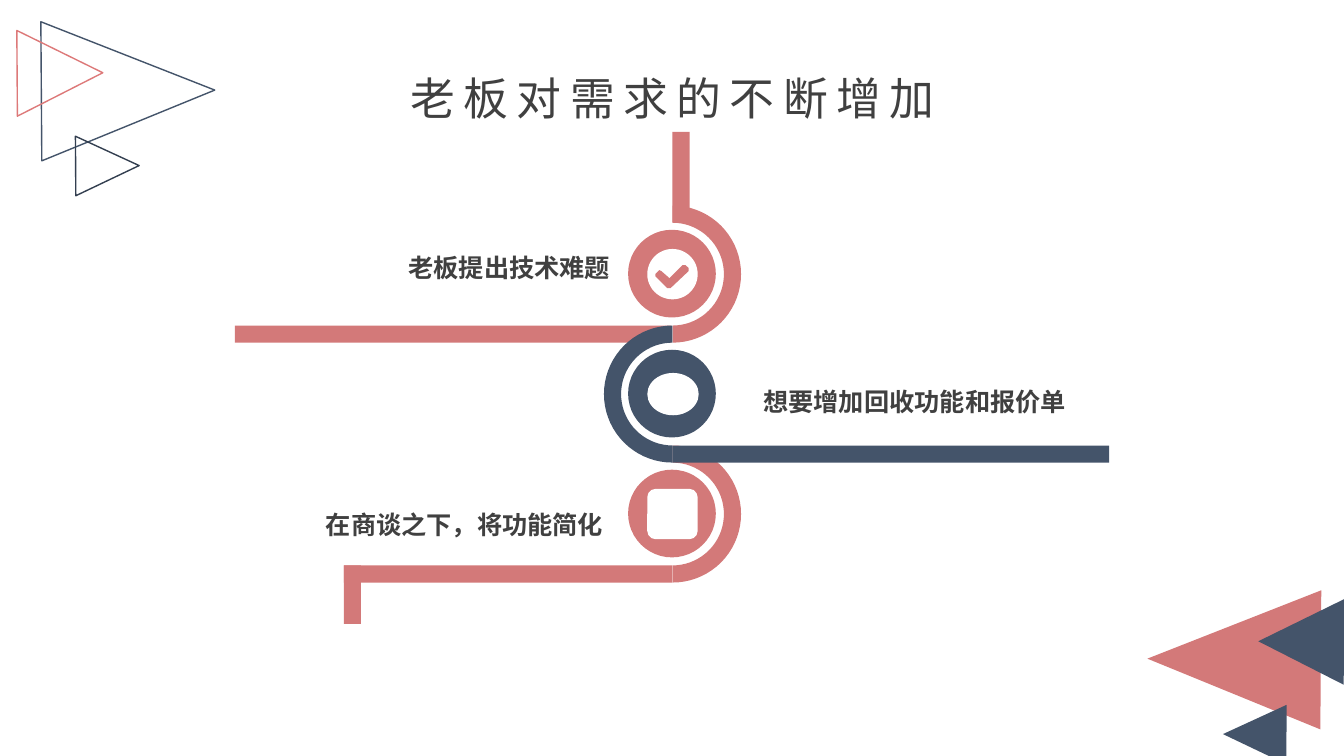
from math import cos, radians, sin

from lxml.etree import SubElement
from pptx import Presentation
from pptx.dml.color import RGBColor
from pptx.enum.shapes import MSO_SHAPE
from pptx.enum.text import MSO_ANCHOR, MSO_AUTO_SIZE, PP_ALIGN
from pptx.oxml.ns import qn
from pptx.util import Pt

PX = 9144  # 100 px to the inch
FONT = "Noto Sans CJK SC"
ROSE = RGBColor(0xD3, 0x79, 0x79)
LIGHT_ROSE = RGBColor(0xDD, 0x79, 0x79)
NAVY = RGBColor(0x44, 0x54, 0x6A)
DARK_NAVY = RGBColor(0x33, 0x3F, 0x50)
WHITE = RGBColor(0xFF, 0xFF, 0xFF)
TEXT = RGBColor(0x40, 0x40, 0x40)

# The winding road: centre line, spacing of its bends, and ring sizes
CENTRE_X, FIRST_Y, STEP = 667, 272, 119
OUTER, INNER, BAND = 68, 51, 17
DISK = 87


class RoadSlide:
    def __init__(self, presentation):
        self.slide = presentation.slides.add_slide(presentation.slide_layouts[5])
        self.shapes = self.slide.shapes

    def paint(self, shape, fill=None, line=None):
        shape.shadow.inherit = False
        if fill is None:
            shape.fill.background()
        else:
            shape.fill.solid()
            shape.fill.fore_color.rgb = fill
        if line is None:
            shape.line.fill.background()
        else:
            shape.line.color.rgb = line
            shape.line.width = Pt(1)

    def preset(self, kind, box, fill=None, line=None, rotation=0):
        shape = self.shapes.add_shape(kind, *(value * PX for value in box))
        shape.rotation = rotation
        self.paint(shape, fill, line)

    def outline(self, points, fill):
        corners = [(round(x * PX), round(y * PX)) for x, y in points]
        builder = self.shapes.build_freeform(*corners[0])
        builder.add_line_segments(corners[1:], close=True)
        self.paint(builder.convert_to_shape(), fill)

    def bend(self, centre_y, side, fill):
        """Half ring open towards the centre line; side is 1 (right) or -1 (left)."""
        angles = [radians(degree) for degree in range(-90, 91, 5)]
        points = [(CENTRE_X + side * radius * cos(angle), centre_y + radius * sin(angle))
                  for radius, sweep in ((OUTER, angles), (INNER, angles[::-1]))
                  for angle in sweep]
        self.outline(points, fill)

    def station(self, index, side, fill, icon, icon_size):
        centre_y = FIRST_Y + index * STEP
        width, height = icon_size
        self.bend(centre_y, side, fill)
        self.preset(MSO_SHAPE.OVAL,
                    (CENTRE_X - DISK // 2 - 1, centre_y - DISK // 2 - 1, DISK, DISK), fill)
        self.preset(icon, (CENTRE_X - width // 2, centre_y - height // 2, width, height), WHITE)

    def add_text(self, frame, text, size, align, bold=False, spacing=0):
        paragraph = frame.paragraphs[0]
        paragraph.alignment = align
        run = paragraph.add_run()
        run.text = text
        run.font.size = Pt(size)
        run.font.bold = bold
        run.font.name = FONT
        run.font.color.rgb = TEXT
        properties = run._r.get_or_add_rPr()
        SubElement(properties, qn("a:ea")).set("typeface", FONT)
        if spacing:
            properties.set("spc", str(spacing * 100))

    def title(self, box, text):
        title = self.shapes.title
        title.left, title.top, title.width, title.height = (value * PX for value in box)
        frame = title.text_frame
        frame.margin_left = frame.margin_right = frame.margin_top = frame.margin_bottom = 0
        frame.vertical_anchor = MSO_ANCHOR.MIDDLE
        frame.auto_size = MSO_AUTO_SIZE.SHAPE_TO_FIT_TEXT
        self.add_text(frame, text, 32, PP_ALIGN.CENTER, spacing=6)

    def label(self, box, text):
        frame = self.shapes.add_textbox(*(value * PX for value in box)).text_frame
        frame.word_wrap = False
        frame.auto_size = MSO_AUTO_SIZE.SHAPE_TO_FIT_TEXT
        self.add_text(frame, text, 18, PP_ALIGN.RIGHT, bold=True)


def main():
    presentation = Presentation()
    presentation.slide_width = 1333 * PX
    presentation.slide_height = 750 * PX
    road = RoadSlide(presentation)

    # Corner triangles
    for box, fill in (((1155, 568, 138, 172), ROSE),
                      ((1215, 697, 59, 63), NAVY),
                      ((1248, 594, 85, 85), NAVY)):
        road.preset(MSO_SHAPE.ISOSCELES_TRIANGLE, box, fill, rotation=270.4)
    for box, line in (((58, 4, 138, 172), NAVY),
                      ((77, 133, 59, 63), DARK_NAVY),
                      ((17, 30, 85, 85), LIGHT_ROSE)):
        road.preset(MSO_SHAPE.ISOSCELES_TRIANGLE, box, line=line, rotation=89.6)

    # First bend with its check mark
    for box in ((233, 323, 433, BAND), (667, 131, BAND, 90)):
        road.preset(MSO_SHAPE.RECTANGLE, box, ROSE)
    road.station(0, 1, ROSE, MSO_SHAPE.OVAL, (50, 50))
    road.outline([(650, 272), (654, 268), (656, 269), (664, 276), (677, 263), (680, 263),
                  (683, 266), (683, 269), (665, 286), (662, 286), (650, 274)], ROSE)

    # Last bend
    for box in ((341, 561, 326, BAND), (341, 561, BAND, 58)):
        road.preset(MSO_SHAPE.RECTANGLE, box, ROSE)
    road.station(2, 1, ROSE, MSO_SHAPE.ROUNDED_RECTANGLE, (50, 50))

    # Middle bend, on top of the other two
    road.preset(MSO_SHAPE.RECTANGLE, (667, 442, 433, BAND), NAVY)
    road.station(1, -1, NAVY, MSO_SHAPE.OVAL, (51, 42))

    # Wording
    road.title((388, 70, 558, 54), "老板对需求的不断增加")
    road.label((393, 245, 222, 40), "老板提出技术难题")
    road.label((744, 378, 323, 40), "想要增加回收功能和报价单")
    road.label((310, 500, 298, 40), "在商谈之下，将功能简化")

    presentation.save("out.pptx")


if __name__ == "__main__":
    main()
